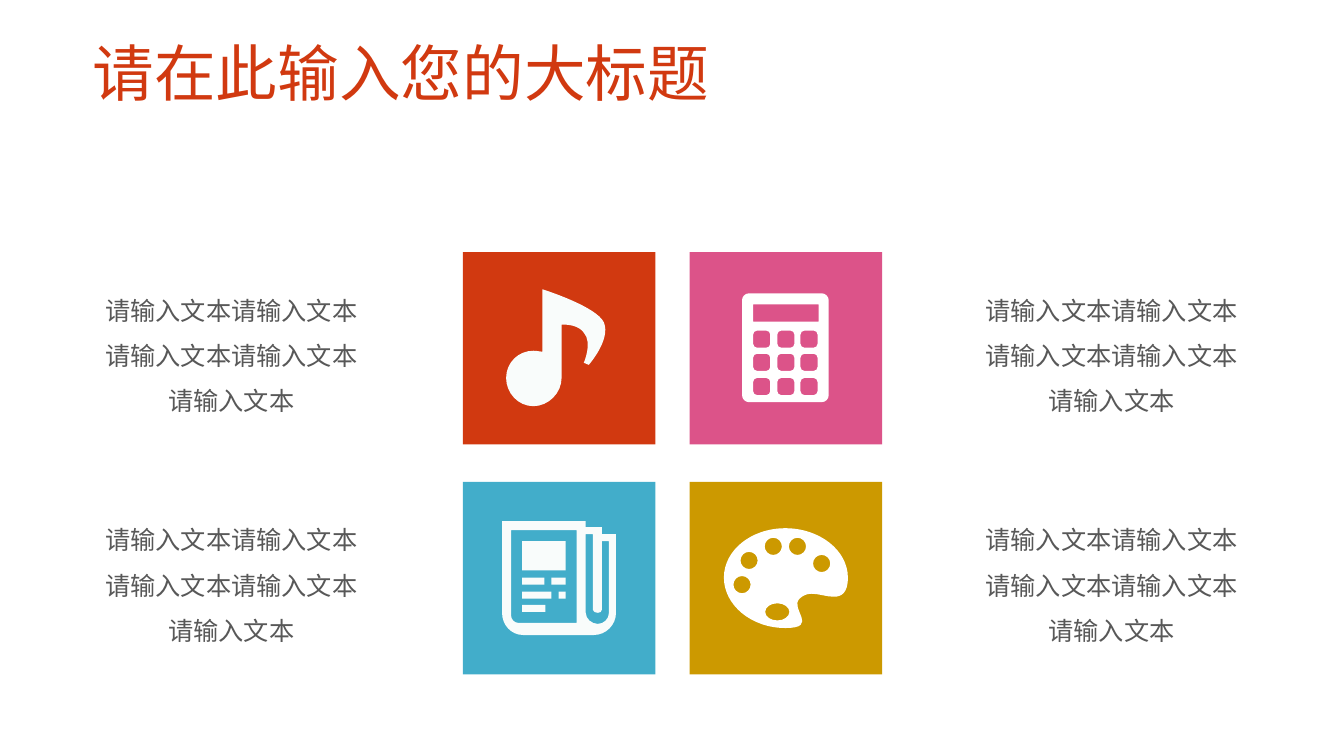
"""Build a titled slide with four icon tiles and their captions."""
from dataclasses import dataclass

from pptx import Presentation
from pptx.dml.color import RGBColor
from pptx.enum.shapes import MSO_SHAPE
from pptx.enum.text import MSO_ANCHOR, MSO_AUTO_SIZE, PP_ALIGN
from pptx.oxml.ns import qn
from pptx.oxml.xmlchemy import OxmlElement
from pptx.shapes.autoshape import Shape
from pptx.shapes.shapetree import SlideShapes
from pptx.util import Inches, Pt

Segment = tuple[float, ...]
Contour = list[Segment]

FONT = "Noto Sans CJK SC"
TILE_SIZE = 1.91
TILE_LEFTS = (4.59, 6.84)
TILE_TOPS = (2.5, 4.78)
CAPTION_LEFTS = (0.93, 9.66)
CAPTION = "请输入文本" * 5
ARC = 0.55


@dataclass
class Tile:
    col: int
    row: int
    fill: str
    icon: list[Contour]
    icon_fill: str


def rgb(color: str) -> RGBColor:
    return RGBColor.from_string(color)


def paint(s: Shape, color: str) -> None:
    s.fill.solid()
    s.fill.fore_color.rgb = rgb(color)
    s.line.fill.background()
    s.shadow.inherit = False


def write(s: Shape, text: str, *, size: float, color: str, align: PP_ALIGN,
          anchor: MSO_ANCHOR, spacing: float) -> None:
    tf = s.text_frame
    tf.word_wrap = True
    tf.auto_size = MSO_AUTO_SIZE.NONE
    tf.vertical_anchor = anchor
    p = tf.paragraphs[0]
    p.alignment = align
    p.line_spacing = spacing
    r = p.add_run()
    r.text = text
    r.font.size = Pt(size)
    r.font.name = FONT
    r.font.color.rgb = rgb(color)
    ea = OxmlElement("a:ea")
    ea.set("typeface", FONT)
    r.font._element.append(ea)


def rect(left: float, top: float, right: float, bottom: float) -> Contour:
    return [(left, top), (right, top), (right, bottom), (left, bottom)]


def round_rect(left: float, top: float, right: float, bottom: float,
               rx: float, ry: float) -> Contour:
    kx, ky = rx * (1 - ARC), ry * (1 - ARC)
    return [
        (left + rx, top), (right - rx, top),
        (right - kx, top, right, top + ky, right, top + ry), (right, bottom - ry),
        (right, bottom - ky, right - kx, bottom, right - rx, bottom), (left + rx, bottom),
        (left + kx, bottom, left, bottom - ky, left, bottom - ry), (left, top + ry),
        (left, top + ky, left + kx, top, left + rx, top)]


def ellipse(cx: float, cy: float, rx: float, ry: float) -> Contour:
    kx, ky = rx * ARC, ry * ARC
    return [
        (cx, cy - ry),
        (cx + kx, cy - ry, cx + rx, cy - ky, cx + rx, cy),
        (cx + rx, cy + ky, cx + kx, cy + ry, cx, cy + ry),
        (cx - kx, cy + ry, cx - rx, cy + ky, cx - rx, cy),
        (cx - rx, cy - ky, cx - kx, cy - ry, cx, cy - ry)]


def points(seg: Segment) -> list[tuple[int, int]]:
    return [(Inches(x), Inches(y)) for x, y in zip(seg[::2], seg[1::2])]


def draw_icon(shapes: SlideShapes, contours: list[Contour], color: str) -> None:
    builder = shapes.build_freeform(*points(contours[0][0])[0], scale=1.0)
    for i, (start, *segments) in enumerate(contours):
        if i:
            builder.move_to(*points(start)[0])
        builder.add_line_segments([pt for seg in segments for pt in points(seg)], close=True)
    s = builder.convert_to_shape()
    paint(s, color)
    lines = iter(list(s._element.iter(qn("a:lnTo"))))
    for seg in (seg for contour in contours for seg in contour[1:]):
        group = [next(lines) for _ in points(seg)]
        if len(group) == 3:
            curve = OxmlElement("a:cubicBezTo")
            group[0].addprevious(curve)
            for line in group:
                curve.append(line[0])
                line.getparent().remove(line)


def music_note() -> list[Contour]:
    return [[
        (5.29, 3.48), (5.33, 3.48, 5.36, 3.49, 5.38, 3.49), (5.38, 2.87),
        (5.38, 2.87, 5.92, 3.04, 5.99, 3.2), (6.06, 3.37, 5.84, 3.62, 5.84, 3.62),
        (5.79, 3.6), (5.79, 3.6, 5.88, 3.4, 5.79, 3.3),
        (5.74, 3.23, 5.64, 3.22, 5.57, 3.22), (5.57, 3.75),
        (5.57, 3.9, 5.44, 4.03, 5.29, 4.03), (5.14, 4.03, 5.02, 3.9, 5.02, 3.75),
        (5.02, 3.6, 5.14, 3.48, 5.29, 3.48)]]


def calculator() -> list[Contour]:
    keys = [round_rect(x, y, x + 0.17, y + 0.17, 0.04, 0.04)
            for y in (3.28, 3.51, 3.75) for x in (7.47, 7.71, 7.94)]
    return [round_rect(7.36, 2.91, 8.22, 3.99, 0.07, 0.07),
            rect(7.47, 3.02, 8.12, 3.19), *keys]


def newspaper() -> list[Contour]:
    outline = [
        (4.98, 5.17), (5.81, 5.17), (5.81, 5.23), (5.97, 5.23), (5.97, 5.3), (6.11, 5.3),
        (6.11, 6.08), (6.11, 6.2, 6.01, 6.3, 5.89, 6.3), (5.19, 6.3),
        (5.07, 6.3, 4.98, 6.2, 4.98, 6.08)]
    page = [(5.72, 5.26), (5.07, 5.26), (5.07, 6.11),
            (5.07, 6.14, 5.1, 6.18, 5.14, 6.18), (5.72, 6.18)]
    fold = [
        (6.04, 5.37), (5.97, 5.37), (5.97, 6.05),
        (5.97, 6.07, 5.95, 6.08, 5.93, 6.08), (5.91, 6.08, 5.88, 6.07, 5.88, 6.05),
        (5.88, 5.3), (5.81, 5.3), (5.81, 6.08),
        (5.81, 6.14, 5.87, 6.19, 5.93, 6.19), (5.99, 6.19, 6.04, 6.14, 6.04, 6.08)]
    lines = [rect(left, top, right, top + 0.07) for left, top, right in (
        (5.18, 5.73, 5.4), (5.47, 5.73, 5.61), (5.18, 5.87, 5.47),
        (5.54, 5.87, 5.61), (5.18, 6, 5.41))]
    return [outline, page, fold, rect(5.18, 5.37, 5.61, 5.66), *lines]


def palette() -> list[Contour]:
    board = [
        (7.79, 5.24), (8.13, 5.24, 8.41, 5.46, 8.41, 5.73),
        (8.41, 5.88, 8.35, 5.92, 8.27, 5.92), (8.2, 5.92, 8.12, 5.89, 8.05, 5.89),
        (8, 5.89, 7.96, 5.91, 7.93, 5.94), (7.83, 6.04, 8.13, 6.23, 7.79, 6.23),
        (7.45, 6.23, 7.18, 6, 7.18, 5.73), (7.18, 5.46, 7.45, 5.24, 7.79, 5.24)]
    paints = [ellipse(x, y, 0.085, 0.085) for x, y in (
        (8.15, 5.59), (7.91, 5.42), (7.67, 5.42), (7.43, 5.56), (7.36, 5.8))]
    return [board, ellipse(7.71, 6.07, 0.12, 0.085), *paints]


def main() -> None:
    prs = Presentation()
    prs.slide_width, prs.slide_height = Inches(13.33), Inches(7.5)
    slide = prs.slides.add_slide(prs.slide_layouts[5])
    title = slide.shapes.title
    title.left, title.top, title.width, title.height = map(Inches, (0.82, 0.12, 11.68, 1.02))
    write(title, "请在此输入您的大标题", size=44, color="D13910", align=PP_ALIGN.LEFT,
          anchor=MSO_ANCHOR.BOTTOM, spacing=0.9)
    tiles = (Tile(0, 0, "D13910", music_note(), "F9FCFB"),
             Tile(1, 0, "DC5389", calculator(), "FFFFFF"),
             Tile(0, 1, "42ADCA", newspaper(), "F9FCFB"),
             Tile(1, 1, "CC9900", palette(), "FFFFFF"))
    for tile in tiles:
        top = TILE_TOPS[tile.row]
        caption = slide.shapes.add_textbox(Inches(CAPTION_LEFTS[tile.col]), Inches(top + 0.2),
                                           Inches(2.73), Inches(1.5))
        write(caption, CAPTION, size=18, color="585858", align=PP_ALIGN.CENTER,
              anchor=MSO_ANCHOR.MIDDLE, spacing=1.5)
        s = slide.shapes.add_shape(MSO_SHAPE.RECTANGLE, Inches(TILE_LEFTS[tile.col]),
                                   Inches(top), Inches(TILE_SIZE), Inches(TILE_SIZE))
        paint(s, tile.fill)
        draw_icon(slide.shapes, tile.icon, tile.icon_fill)
    prs.save("out.pptx")


if __name__ == "__main__":
    main()
